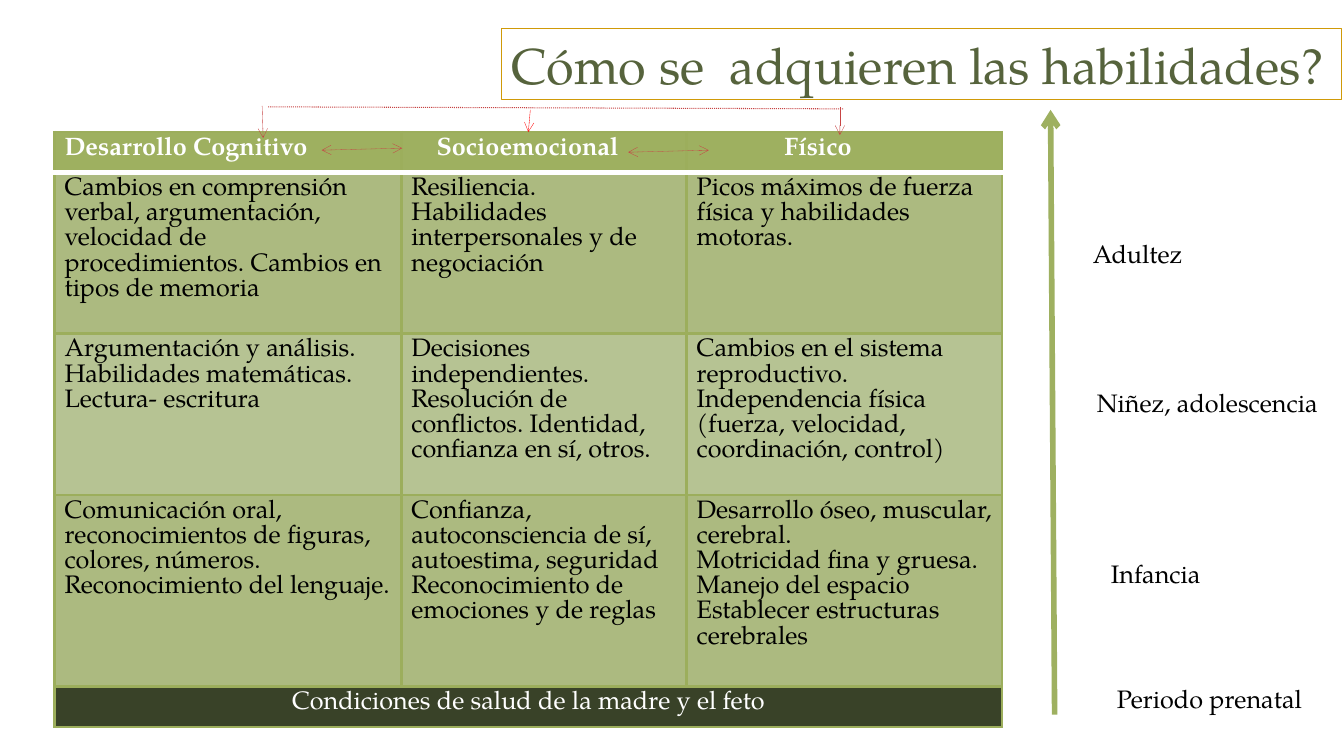
import lxml.etree
import pptx
import pptx.dml.color
import pptx.enum.dml
import pptx.enum.shapes
import pptx.enum.text
import pptx.oxml.ns
import pptx.util

Inches = pptx.util.Inches
Pt = pptx.util.Pt
qn = pptx.oxml.ns.qn
Align = pptx.enum.text.PP_ALIGN
Anchor = pptx.enum.text.MSO_ANCHOR
Dash = pptx.enum.dml.MSO_LINE

GREEN, EDGE, RED, WHITE, BLACK = "9EB060", "9CAE5C", "C74444", "FFFFFF", "000000"


def color(code):
    return pptx.dml.color.RGBColor.from_string(code)


def child(parent, tag, **attrs):
    return lxml.etree.SubElement(parent, qn(tag), **attrs)


class Page:
    face = "TeX Gyre Pagella"

    def __init__(self, deck):
        self.slide = deck.slides.add_slide(deck.slide_layouts[5])
        self.shapes = self.slide.shapes

    def letter(self, frame, lines, size=18, ink=BLACK, bold=False, **form):
        for i, line in enumerate(lines):
            para = frame.paragraphs[0] if i == 0 else frame.add_paragraph()
            for key, value in form.items():
                setattr(para, key, value)
            run = para.add_run()
            run.text = line
            for key, value in {"name": self.face, "size": Pt(size), "bold": bold}.items():
                setattr(run.font, key, value)
            run.font.color.rgb = color(ink)

    def title(self, text, box):
        head = self.shapes.title
        for key, value in zip(("left", "top", "width", "height"), box):
            setattr(head, key, Inches(value))
        head.line.color.rgb = color("D09A08")
        head.line.width = Pt(0.75)
        frame = head.text_frame
        frame.word_wrap = False
        frame.auto_size = pptx.enum.text.MSO_AUTO_SIZE.NONE
        frame.vertical_anchor = Anchor.MIDDLE
        self.letter(frame, [text], 36, "56633C", alignment=Align.LEFT)

    def label(self, text, left, top, width):
        box = self.shapes.add_textbox(*map(Inches, (left, top, width, 0.4)))
        box.text_frame.word_wrap = False
        self.letter(box.text_frame, [text])

    def line(self, start, end, ink, width, dash=None, head=False, tail=False):
        link = self.shapes.add_connector(
            pptx.enum.shapes.MSO_CONNECTOR.STRAIGHT, *map(Inches, start + end))
        link.line.color.rgb = color(ink)
        link.line.width = Pt(width)
        if dash:
            link.line.dash_style = dash
        stroke = link._element.spPr.find(qn("a:ln"))
        for tag, tip in (("a:headEnd", head), ("a:tailEnd", tail)):
            if tip:
                child(stroke, tag, type="arrow")
        child(link._element.spPr, "a:effectLst")

    def border(self, cell, **sides):
        props = cell._tc.get_or_add_tcPr()
        for side in "LRTB":
            ink, width = sides.get(side, (EDGE, 2))
            edge = child(props, "a:ln" + side, w=str(Pt(width)))
            child(child(edge, "a:solidFill"), "a:srgbClr", val=ink)

    def cell(self, cell, lines, fill, ink=BLACK, bold=False, indent=0, sides=None, align=Align.LEFT):
        self.border(cell, **(sides or {}))
        cell.fill.solid()
        cell.fill.fore_color.rgb = color(fill)
        cell.margin_left = Inches(0.1 + indent)
        self.letter(cell.text_frame, lines, 18, ink, bold, alignment=align, line_spacing=Pt(18))

    def table(self, heads, body, foot, spot, cols, rows):
        grid = self.shapes.add_table(
            len(rows), len(cols), *map(Inches, spot + (sum(cols), sum(rows)))).table
        for col, width in zip(grid.columns, cols):
            col.width = Inches(width)
        for row, height in zip(grid.rows, rows):
            row.height = Inches(height)
        rule = (WHITE, 4)
        for c, (text, indent) in enumerate(heads):
            self.cell(grid.cell(0, c), [text], GREEN, WHITE, True, indent, {"B": rule})
        for r, row in enumerate(body, 1):
            for c, lines in enumerate(row):
                self.cell(grid.cell(r, c), lines, "ACBA80" if r % 2 else "B6C393",
                          sides={"T": rule} if r == 1 else None)
        last = len(rows) - 1
        grid.cell(last, 0).merge(grid.cell(last, len(cols) - 1))
        for c in range(1, len(cols)):
            self.border(grid.cell(last, c))
        self.cell(grid.cell(last, 0), [foot], "394228", WHITE, align=Align.CENTER)


HEADS = [("Desarrollo Cognitivo", 0), ("Socioemocional", 0.25), ("Físico", 0.87)]
BODY = [
    [["Cambios en comprensión verbal, argumentación, velocidad de procedimientos. "
      "Cambios en tipos de memoria"],
     ["Resiliencia.", "Habilidades interpersonales y de negociación"],
     ["Picos máximos de fuerza física y habilidades motoras."]],
    [["Argumentación y análisis. Habilidades matemáticas. Lectura- escritura"],
     ["Decisiones independientes. Resolución de conflictos. Identidad, confianza en sí, otros."],
     ["Cambios en el sistema reproductivo. Independencia física "
      "(fuerza, velocidad, coordinación, control)"]],
    [["Comunicación oral, reconocimientos de figuras, colores, números. "
      "Reconocimiento del lenguaje."],
     ["Confianza, autoconsciencia de sí, autoestima, seguridad",
      "Reconocimiento de emociones y de reglas"],
     ["Desarrollo óseo, muscular, cerebral.", "Motricidad fina y gruesa.",
      "Manejo del espacio", "Establecer estructuras cerebrales"]],
]
STAGES = [
    ("Periodo prenatal", 10.98, 6.73, 2.08),
    ("Infancia", 10.92, 5.49, 1.1),
    ("Niñez, adolescencia", 10.78, 3.79, 2.42),
    ("Adultez", 10.74, 2.32, 1.11),
]
DROPS = [
    ((2.6, 1.05), (2.61, 1.37), RED),
    ((8.33, 1.06), (8.33, 1.34), RED),
    ((5.26, 1.09), (5.24, 1.31), "FF0000"),
]


def main():
    deck = pptx.Presentation()
    deck.slide_width, deck.slide_height = Inches(13.33), Inches(7.5)
    page = Page(deck)
    page.title("Cómo se  adquieren las habilidades?", (4.97, 0.28, 8.34, 0.71))
    page.table(HEADS, BODY, "Condiciones de salud de la madre y el feto",
               (0.54, 1.31), (3.44, 2.83, 3.13), (0.4, 1.6, 1.6, 1.9, 0.4))
    page.line((10.46, 7.09), (10.42, 1.09), GREEN, 4, tail=True)
    for stage in STAGES:
        page.label(*stage)
    for left, top in ((3.19, 1.49), (6.23, 1.51)):
        page.line((left, top), (left + 0.8, top - 0.02), RED, 0.25, Dash.ROUND_DOT, True, True)
    page.line((2.66, 1.06), (8.37, 1.08), RED, 0.75, Dash.ROUND_DOT)
    for start, end, ink in DROPS:
        page.line(start, end, ink, 0.25, tail=True)
    deck.save("out.pptx")


if __name__ == "__main__":
    main()
